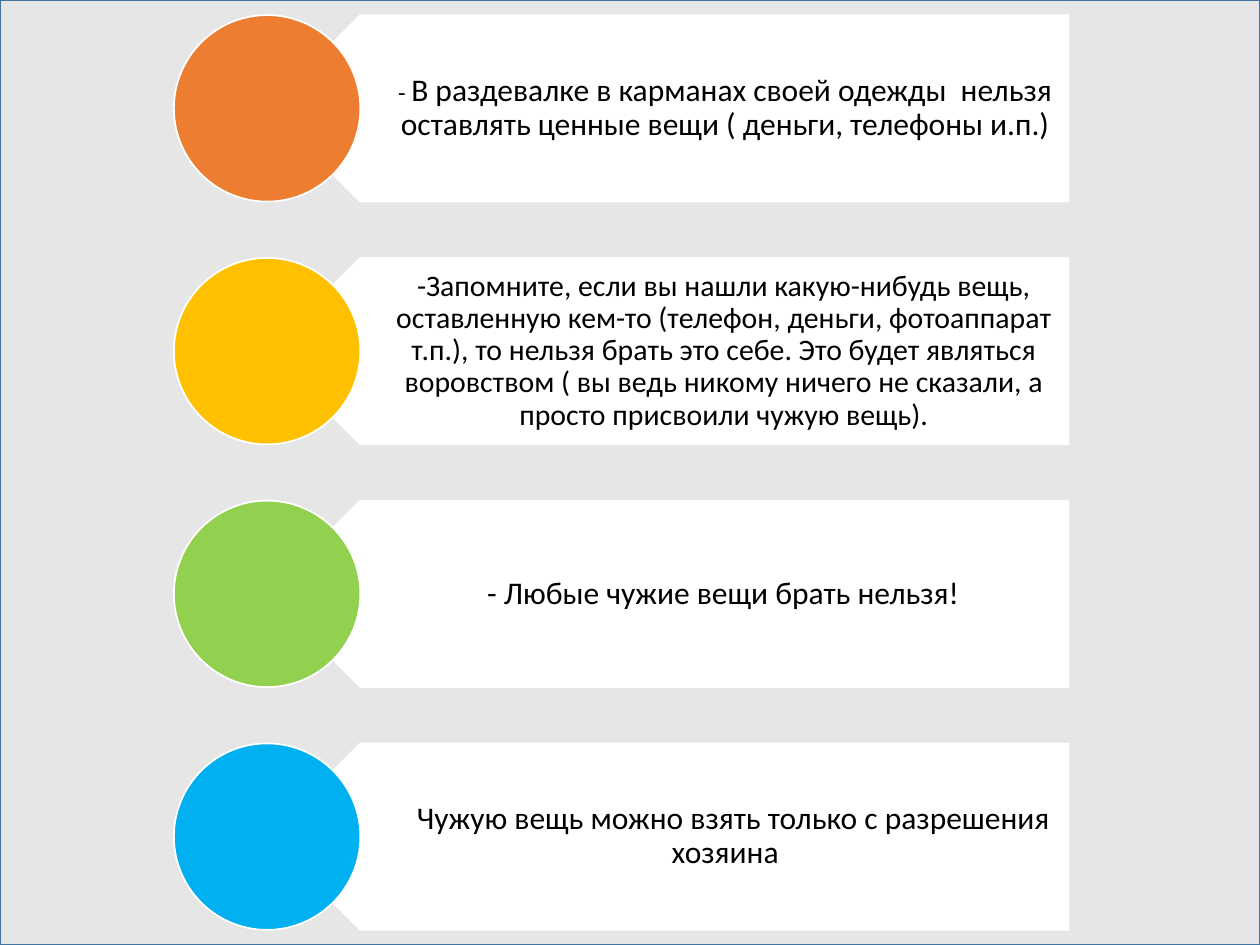
from dataclasses import dataclass

from pptx import Presentation
from pptx import util as u
from pptx.dml.color import RGBColor
from pptx.enum import shapes, text


@dataclass(frozen=True)
class Theme:
    font: str = "Calibri"
    ink: str = "000000"
    paper: str = "FFFFFF"
    backdrop: str = "E7E6E6"
    frame: str = "43739E"
    large: int = 18
    medium: int = 17
    small: int = 14
    outline: int = 1
    line_spacing: float = 0.9


@dataclass(frozen=True)
class Rule:
    color: str
    wording: str
    size: int
    dash: str = ""
    inset_right: float = 0.11
    inset_edge: float = 0.06
    first_indent: float = 0


@dataclass(frozen=True)
class Box:
    left: float
    top: float
    width: float
    height: float

    def inches(self):
        return [u.Inches(n) for n in (self.left, self.top, self.width, self.height)]


THEME = Theme()
SLIDE = Box(0, 0, 10, 7.5)
RULES = [
    Rule("ED7D31", "В раздевалке в карманах своей одежды  нельзя "
         "оставлять ценные вещи ( деньги, телефоны и.п.)", THEME.large, dash="- "),
    Rule("FFC000", "-Запомните, если вы нашли какую-нибудь вещь, оставленную кем-то "
         "(телефон, деньги, фотоаппарат т.п.), то нельзя брать это себе. "
         "Это будет являться воровством ( вы ведь никому ничего не сказали, "
         "а просто присвоили чужую вещь).", THEME.medium,
         inset_right=0.13, inset_edge=0.07),
    Rule("92D050", "- Любые чужие вещи брать нельзя!", THEME.large,
         inset_right=0.14, inset_edge=0.07),
    Rule("00B0F0", "Чужую вещь можно взять только с разрешения хозяина",
         THEME.large, first_indent=0.13),
]

# Rows share the height between equal top and bottom margins.
MARGIN = 0.12
ROW_HEIGHT = 1.48
ROW_STEP = (SLIDE.height - 2 * MARGIN - ROW_HEIGHT) / (len(RULES) - 1)
CIRCLE_LEFT = 1.38
BANNER_LEFT = CIRCLE_LEFT + ROW_HEIGHT / 2
BANNER_RIGHT = 8.48
TEXT_LEFT = BANNER_LEFT + ROW_HEIGHT / 4
TEXT_INSET = 0.65


def add_filled_shape(slide, kind: shapes.MSO_SHAPE, box: Box, fill: str,
                     line: str = THEME.paper, rotation: float = 0) -> None:
    shape = slide.shapes.add_shape(kind, *box.inches())
    shape.shadow.inherit = False
    shape.rotation = rotation
    shape.fill.solid()
    shape.fill.fore_color.rgb = RGBColor.from_string(fill)
    shape.line.color.rgb = RGBColor.from_string(line)
    shape.line.width = u.Pt(THEME.outline)


def add_run(paragraph, wording: str, *, size: int, color: str = THEME.ink) -> None:
    run = paragraph.add_run()
    run.text = wording
    run.font.name = THEME.font
    run.font.size = u.Pt(size)
    run.font.color.rgb = RGBColor.from_string(color)


def add_rule_text(slide, rule: Rule, box: Box) -> None:
    frame = slide.shapes.add_textbox(*box.inches()).text_frame
    frame.word_wrap = True
    frame.vertical_anchor = text.MSO_ANCHOR.MIDDLE
    frame.margin_left = u.Inches(TEXT_INSET)
    frame.margin_right = u.Inches(rule.inset_right)
    frame.margin_top = frame.margin_bottom = u.Inches(rule.inset_edge)
    paragraph = frame.paragraphs[0]
    paragraph.alignment = text.PP_ALIGN.CENTER
    paragraph.line_spacing = THEME.line_spacing
    if rule.first_indent:
        paragraph._p.get_or_add_pPr().set("indent", str(u.Inches(rule.first_indent)))
    if rule.dash:
        add_run(paragraph, rule.dash, size=THEME.small)
    add_run(paragraph, rule.wording, size=rule.size)


def add_rule_row(slide, rule: Rule, top: float) -> None:
    """Draw the left-pointing banner, its text and the circle over its tip."""
    banner = Box(BANNER_LEFT, top, BANNER_RIGHT - BANNER_LEFT, ROW_HEIGHT)
    add_filled_shape(slide, shapes.MSO_SHAPE.PENTAGON, banner, THEME.paper, rotation=180)
    add_rule_text(slide, rule, Box(TEXT_LEFT, top, BANNER_RIGHT - TEXT_LEFT, ROW_HEIGHT))
    circle = Box(CIRCLE_LEFT, top, ROW_HEIGHT, ROW_HEIGHT)
    add_filled_shape(slide, shapes.MSO_SHAPE.OVAL, circle, rule.color)


def main() -> None:
    presentation = Presentation()
    presentation.slide_width = u.Inches(SLIDE.width)
    presentation.slide_height = u.Inches(SLIDE.height)
    blank_layout = presentation.slide_layouts[6]
    slide = presentation.slides.add_slide(blank_layout)
    add_filled_shape(slide, shapes.MSO_SHAPE.RECTANGLE, SLIDE, THEME.backdrop, THEME.frame)
    for row, rule in enumerate(RULES):
        add_rule_row(slide, rule, MARGIN + row * ROW_STEP)
    presentation.save("out.pptx")


if __name__ == "__main__":
    main()
